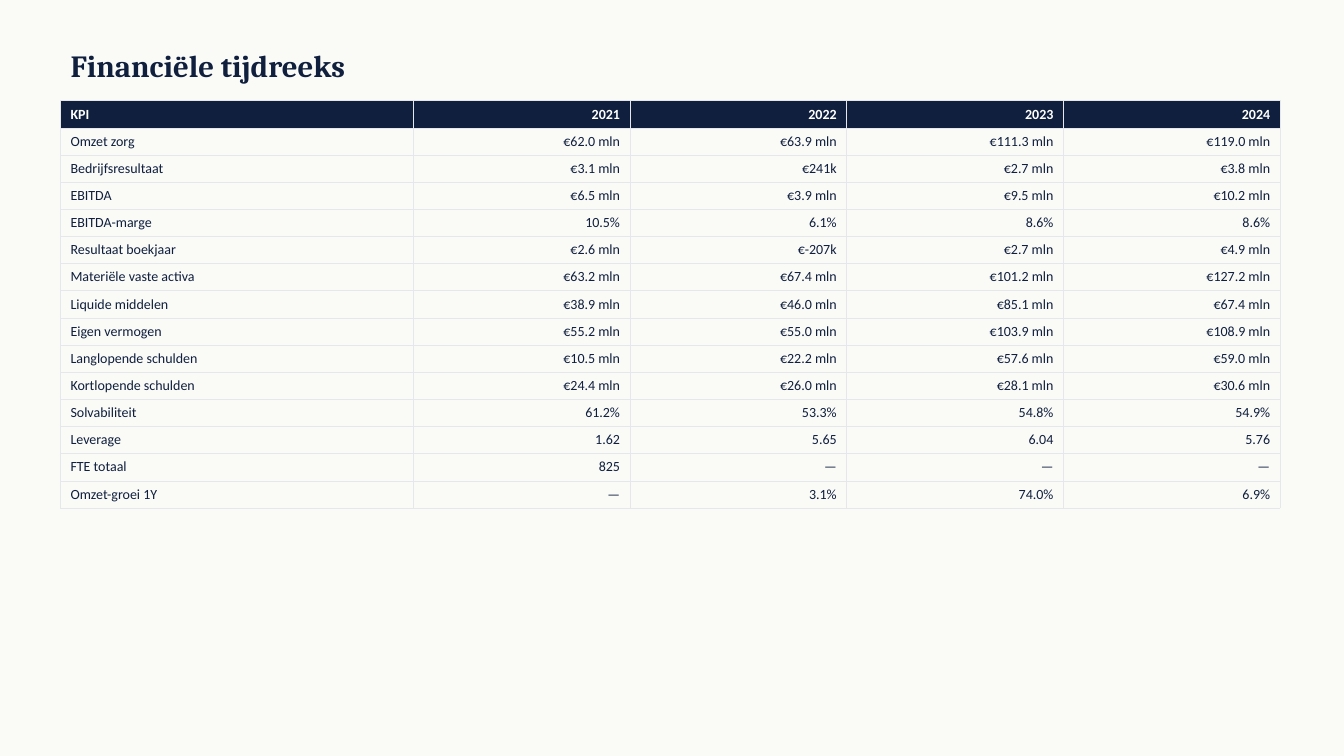
from lxml import etree
from pptx import Presentation, util as u
from pptx.dml.color import RGBColor
from pptx.enum import text
from pptx.oxml import ns

NAVY = RGBColor(0x0F, 0x1F, 0x3D)
WHITE = RGBColor(0xFF, 0xFF, 0xFF)
PAPER = RGBColor(0xFA, 0xFA, 0xF7)
RULE = RGBColor(0xE5, 0xE7, 0xEB)

LEFT = 43.2
ROW_HEIGHT = 19.4
COLUMN_WIDTHS = [252] + [154.8] * 4

KPIS = [
    ("KPI", "2021", "2022", "2023", "2024"),
    ("Omzet zorg", "€62.0 mln", "€63.9 mln", "€111.3 mln", "€119.0 mln"),
    ("Bedrijfsresultaat", "€3.1 mln", "€241k", "€2.7 mln", "€3.8 mln"),
    ("EBITDA", "€6.5 mln", "€3.9 mln", "€9.5 mln", "€10.2 mln"),
    ("EBITDA-marge", "10.5%", "6.1%", "8.6%", "8.6%"),
    ("Resultaat boekjaar", "€2.6 mln", "€-207k", "€2.7 mln", "€4.9 mln"),
    ("Materiële vaste activa", "€63.2 mln", "€67.4 mln", "€101.2 mln", "€127.2 mln"),
    ("Liquide middelen", "€38.9 mln", "€46.0 mln", "€85.1 mln", "€67.4 mln"),
    ("Eigen vermogen", "€55.2 mln", "€55.0 mln", "€103.9 mln", "€108.9 mln"),
    ("Langlopende schulden", "€10.5 mln", "€22.2 mln", "€57.6 mln", "€59.0 mln"),
    ("Kortlopende schulden", "€24.4 mln", "€26.0 mln", "€28.1 mln", "€30.6 mln"),
    ("Solvabiliteit", "61.2%", "53.3%", "54.8%", "54.9%"),
    ("Leverage", "1.62", "5.65", "6.04", "5.76"),
    ("FTE totaal", "825", "—", "—", "—"),
    ("Omzet-groei 1Y", "—", "3.1%", "74.0%", "6.9%"),
]


class Report:
    """Holds the house style and the current slide."""

    title_format = {"name": "Cambria", "size": u.Pt(22), "bold": True}
    header_format = {"name": "Calibri", "size": u.Pt(10), "bold": True}
    body_format = {"name": "Calibri", "size": u.Pt(10), "bold": False}

    def __init__(self, deck):
        self.slide = deck.slides.add_slide(deck.slide_layouts[5])
        background = self.slide.background.fill
        background.solid()
        background.fore_color.rgb = PAPER

    def words(self, paragraph, wording, font_format, color, align):
        run = paragraph.add_run()
        run.text = wording
        paragraph.alignment = align
        for key, value in font_format.items():
            setattr(run.font, key, value)
        run.font.color.rgb = color

    def title(self, wording, left, top, width, height):
        heading = self.slide.shapes.title
        place = {"left": left, "top": top, "width": width, "height": height}
        for key, value in place.items():
            setattr(heading, key, u.Pt(value))
        frame = heading.text_frame
        layout = {
            "word_wrap": True,
            "auto_size": text.MSO_AUTO_SIZE.NONE,
            "vertical_anchor": text.MSO_ANCHOR.MIDDLE,
        }
        for key, value in layout.items():
            setattr(frame, key, value)
        self.words(frame.paragraphs[0], wording, self.title_format, NAVY, text.PP_ALIGN.LEFT)

    def borders(self, cell):
        properties = cell._tc.get_or_add_tcPr()
        for side in ("lnL", "lnR", "lnT", "lnB"):
            line = etree.SubElement(properties, ns.qn(f"a:{side}"), w=str(u.Pt(0.5)))
            fill = etree.SubElement(line, ns.qn("a:solidFill"))
            etree.SubElement(fill, ns.qn("a:srgbClr"), val=str(RULE))

    def table(self, rows, widths, left, top, row_height):
        frame = self.slide.shapes.add_table(
            len(rows), len(widths), u.Pt(left), u.Pt(top),
            u.Pt(sum(widths)), u.Pt(row_height * len(rows)),
        )
        grid = frame.table
        grid.horz_banding = False
        for column, width in zip(grid.columns, widths):
            column.width = u.Pt(width)
        for r, row in enumerate(rows):
            grid.rows[r].height = u.Pt(row_height)
            for c, wording in enumerate(row):
                cell = grid.cell(r, c)
                self.borders(cell)
                if r == 0:
                    cell.fill.solid()
                    cell.fill.fore_color.rgb = NAVY
                else:
                    cell.fill.background()
                self.words(
                    cell.text_frame.paragraphs[0], wording,
                    self.body_format if r else self.header_format,
                    NAVY if r else WHITE,
                    text.PP_ALIGN.RIGHT if c else text.PP_ALIGN.LEFT,
                )


def main():
    deck = Presentation()
    deck.slide_width, deck.slide_height = u.Pt(960), u.Pt(540)
    report = Report(deck)
    report.title("Financiële tijdreeks", LEFT, 28.8, 864, 36)
    report.table(KPIS, COLUMN_WIDTHS, LEFT, 72, ROW_HEIGHT)
    deck.save("out.pptx")


if __name__ == "__main__":
    main()
